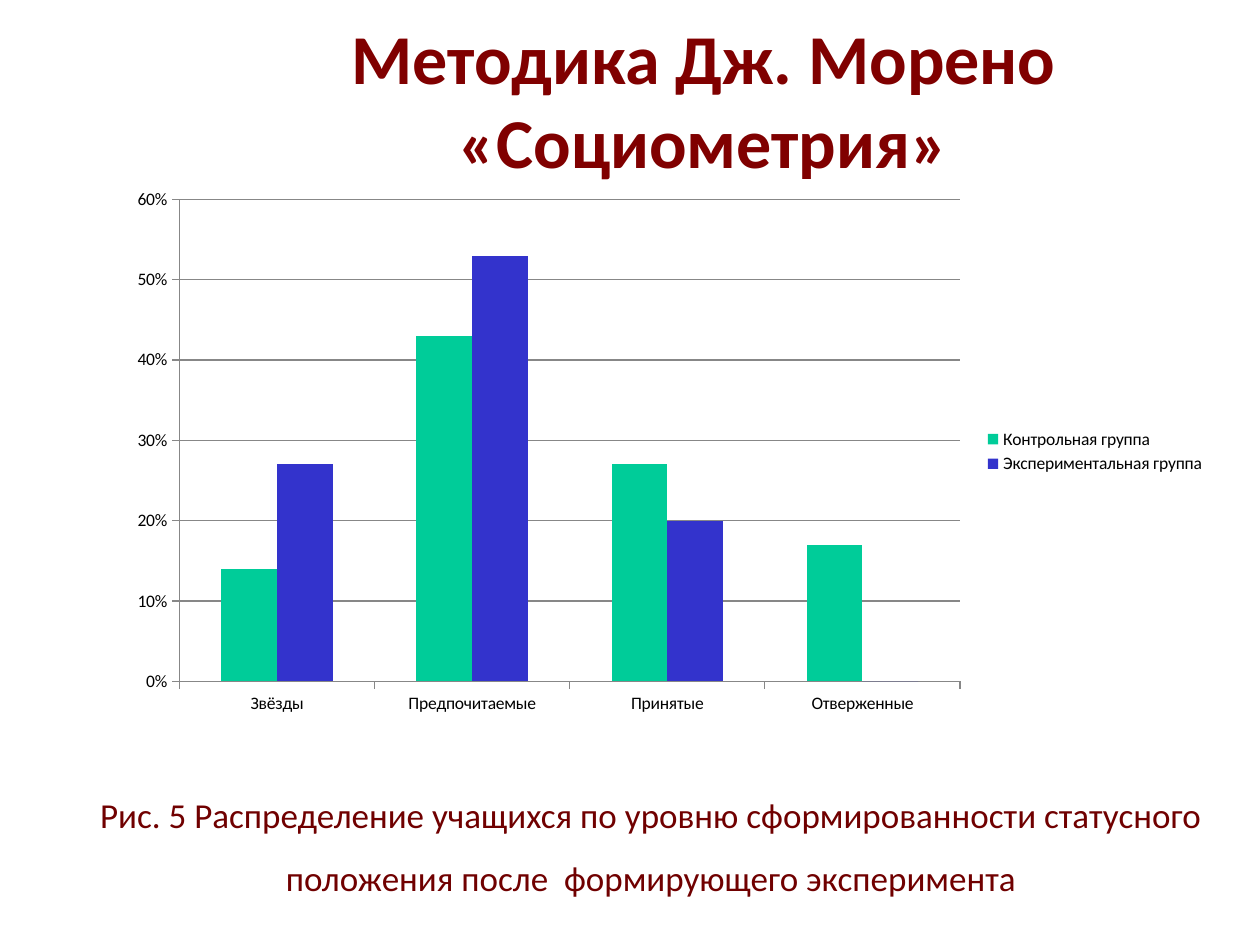
import pptx
import pptx.chart.data
import pptx.dml.color
import pptx.enum.chart
import pptx.enum.text
import pptx.util

RGB = pptx.dml.color.RGBColor
MAROON = RGB(0x80, 0x00, 0x00)
WINE = RGB(0x70, 0x00, 0x00)
GREEN = RGB(0x00, 0xCC, 0x99)
BLUE = RGB(0x33, 0x33, 0xCC)
GRAY = RGB(0x87, 0x87, 0x87)
BLACK = RGB(0x00, 0x00, 0x00)

COLS, ROWS = 120, 90


def apply(item, style):
    for key, value in style.items():
        setattr(item, key, value)


class Deck:
    """Slide style and grid, with one method per kind of element."""
    face = "Calibri"

    def __init__(self):
        self.file = pptx.Presentation()
        self.file.slide_width = pptx.util.Inches(10)
        self.file.slide_height = pptx.util.Inches(7.5)
        self.slide = self.file.slides.add_slide(self.file.slide_layouts[6])

    def area(self, col, row, wide, high):
        x = self.file.slide_width / COLS
        y = self.file.slide_height / ROWS
        return [round(n) for n in (col * x, row * y, wide * x, high * y)]

    def font(self, font, size, color, bold=False):
        apply(font, {"name": self.face, "size": pptx.util.Pt(size), "bold": bold})
        font.color.rgb = color

    def text(self, words, cell, size, color, bold=False, space=1.0, anchor="TOP"):
        frame = self.slide.shapes.add_textbox(*self.area(*cell)).text_frame
        apply(frame, {"word_wrap": True,
                      "vertical_anchor": pptx.enum.text.MSO_ANCHOR[anchor]})
        para = frame.paragraphs[0]
        apply(para, {"text": words, "line_spacing": space,
                     "alignment": pptx.enum.text.PP_ALIGN.CENTER})
        self.font(para.runs[0].font, size, color, bold)

    def chart(self, names, series, cell):
        data = pptx.chart.data.CategoryChartData(number_format="0%")
        data.categories = names
        for name, values, _ in series:
            data.add_series(name, values)
        kind = pptx.enum.chart.XL_CHART_TYPE.COLUMN_CLUSTERED
        chart = self.slide.shapes.add_chart(kind, *self.area(*cell), data).chart
        apply(chart, {"has_title": False, "has_legend": True})
        self.font(chart.font, 10, BLACK)
        apply(chart.legend, {
            "position": pptx.enum.chart.XL_LEGEND_POSITION.RIGHT,
            "include_in_layout": False})

        # Columns
        plot = chart.plots[0]
        apply(plot, {"gap_width": 150, "overlap": 0, "vary_by_categories": False})
        for bars, (_, _, color) in zip(plot.series, series):
            bars.format.fill.solid()
            bars.format.fill.fore_color.rgb = color
            bars.invert_if_negative = False

        # Axes and grid lines
        for axis in (chart.category_axis, chart.value_axis):
            apply(axis, {
                "major_tick_mark": pptx.enum.chart.XL_TICK_MARK.OUTSIDE,
                "minor_tick_mark": pptx.enum.chart.XL_TICK_MARK.NONE})
            axis.format.line.color.rgb = GRAY
        scale = chart.value_axis
        apply(scale, {"minimum_scale": 0, "maximum_scale": 0.6,
                      "major_unit": 0.1, "has_major_gridlines": True})
        apply(scale.tick_labels, {"number_format": "0%",
                                  "number_format_is_linked": False})
        scale.major_gridlines.format.line.color.rgb = GRAY


def main():
    deck = Deck()

    # Title
    deck.text("Методика Дж. Морено «Социометрия»", (19, 2, 96, 16),
              40, MAROON, bold=True, anchor="BOTTOM")

    # Figure caption
    deck.text("Рис. 5 Распределение учащихся по уровню сформированности "
              "статусного положения после  формирующего эксперимента",
              (4, 73, 116, 17), 20, WINE, space=1.5)

    # Status shares by group
    deck.chart(
        ["Звёзды", "Предпочитаемые", "Принятые", "Отверженные"],
        [("Контрольная группа", (0.14, 0.43, 0.27, 0.17), GREEN),
         ("Экспериментальная группа", (0.27, 0.53, 0.2, 0), BLUE)],
        (11, 17, 105, 52))

    deck.file.save("out.pptx")


if __name__ == "__main__":
    main()
